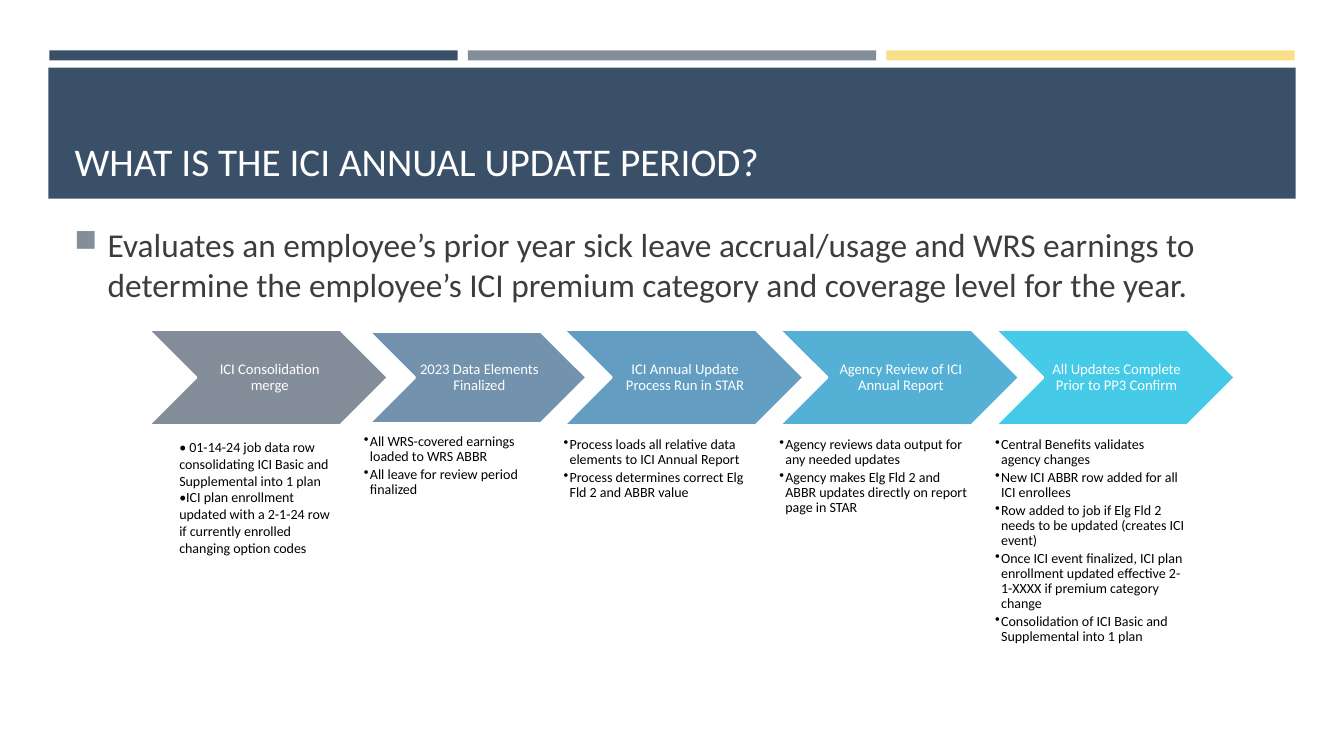
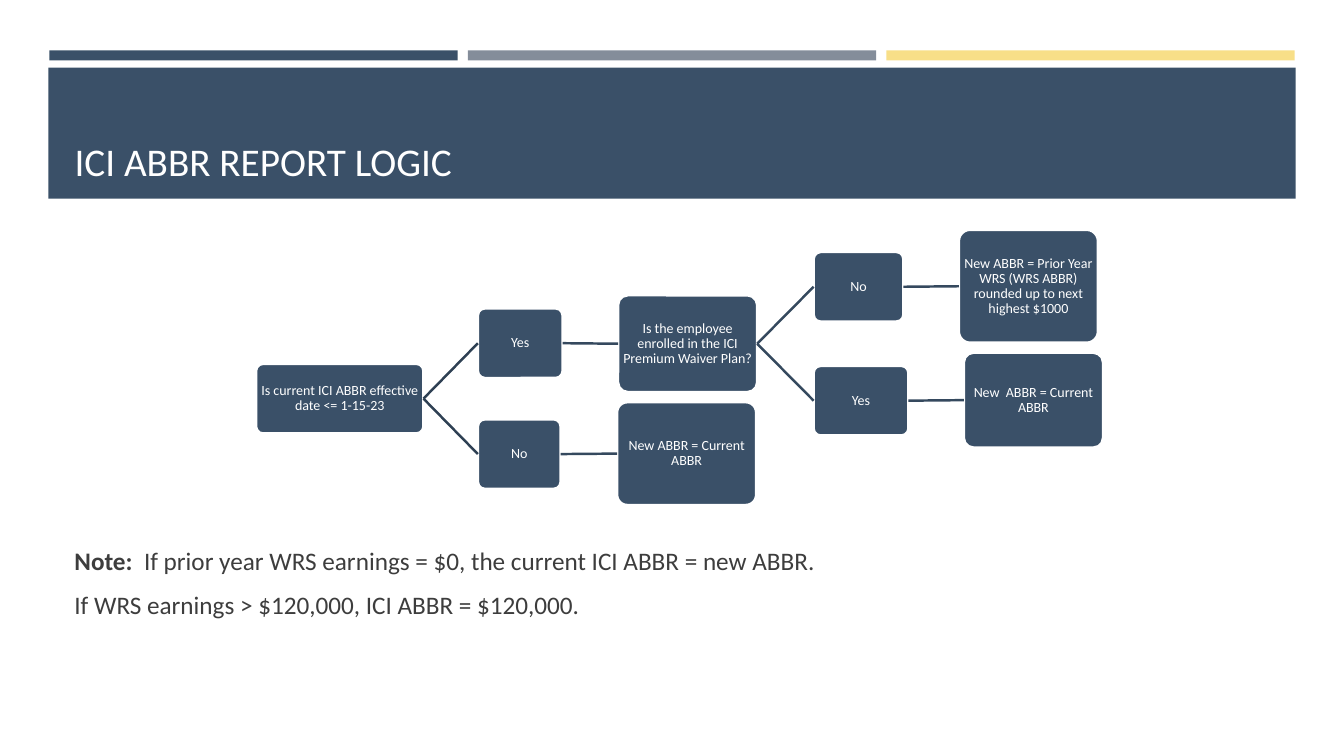
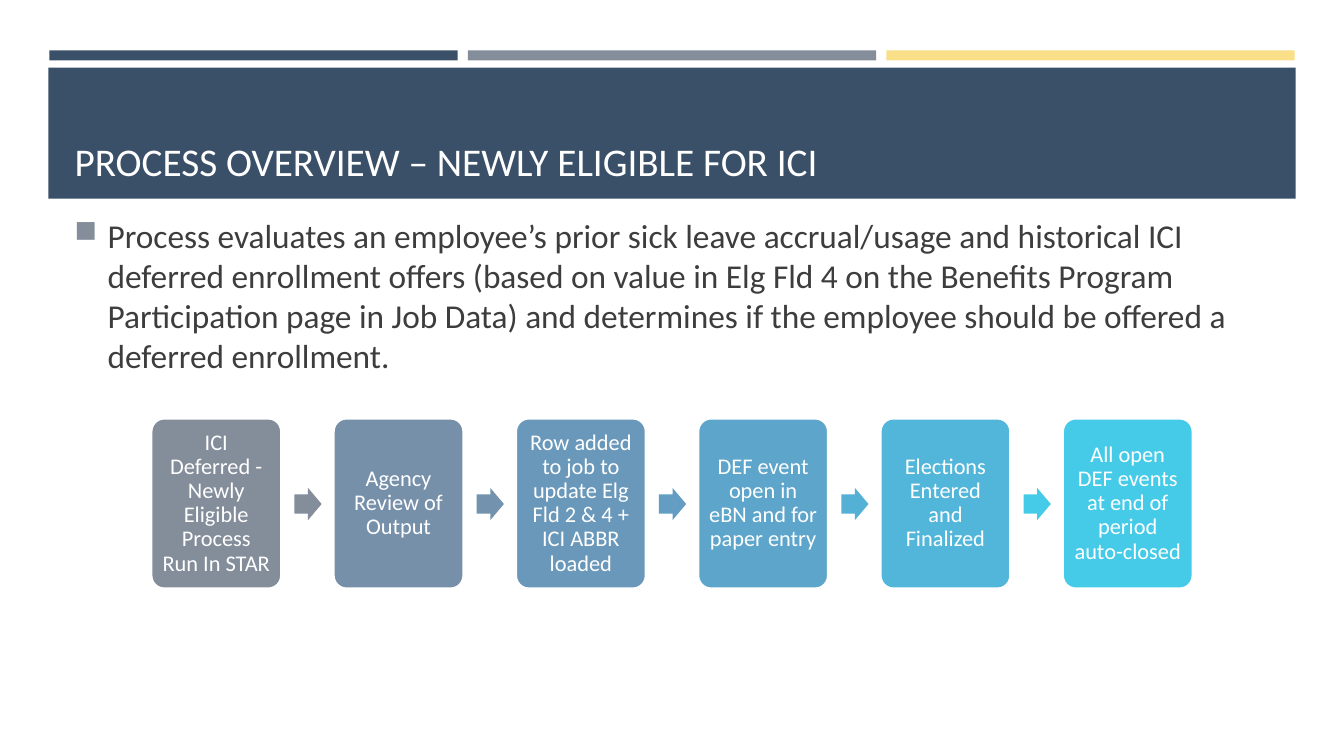
"""Build three slides on the ICI annual update process."""
from lxml.etree import SubElement
from pptx import Presentation
from pptx.dml.color import RGBColor
from pptx.enum.shapes import MSO_CONNECTOR, MSO_SHAPE as Preset
from pptx.enum.text import MSO_ANCHOR as Anchor, MSO_AUTO_SIZE, PP_ALIGN as Align
from pptx.oxml.ns import qn
from pptx.util import Inches, Pt

COLORS = {
    "navy": "3A5068", "grey": "848D9A", "yellow": "F8DF88",
    "white": "FFFFFF", "black": "000000", "body": "3D3D3D",
    "branch": "2E4053", "link": "35495E",
    "stage1": "848D9A", "stage2": "7392AE", "stage3": "639EC2",
    "stage4": "54B1D5", "stage5": "45CBE8",
    "step1": "848D9A", "step2": "7790AA", "step3": "6A98BA",
    "step4": "5DA5CA", "step5": "51B6D9", "step6": "45CBE8",
}
FONT = "Calibri"
LEFT, WIDTH = 0.64, 12.06


def color(name):
    return RGBColor.from_string(COLORS[name])


class Deck:
    def __init__(self):
        self.presentation = Presentation()
        self.presentation.slide_width = Inches(13.33)
        self.presentation.slide_height = Inches(7.5)
        self.slide = None

    def add_slide(self, title):
        layout = self.presentation.slide_layouts[5]
        self.slide = self.presentation.slides.add_slide(layout)
        for index, name in enumerate(("navy", "grey", "yellow")):
            self.shape(Preset.RECTANGLE, (0.49 + 4.15 * index, 0.5, 4.05, 0.1), name)
        self.shape(Preset.RECTANGLE, (0.48, 0.67, 12.37, 1.3), "navy")
        placeholder = self.slide.shapes.title
        placeholder.element.getparent().append(placeholder.element)
        placeholder.left, placeholder.top = Inches(LEFT), Inches(0.77)
        placeholder.width, placeholder.height = Inches(WIDTH), Inches(1.11)
        placeholder.text_frame.auto_size = MSO_AUTO_SIZE.NONE
        self.fill_text(placeholder, [title], 28, "white", anchor=Anchor.BOTTOM)

    def fill_text(self, shape, texts, size, ink, anchor=Anchor.TOP, align=Align.LEFT,
                  insets=(0.1, 0.05, 0.1, 0.05), spacing=None, gap=0, bullet=None, lead=None):
        frame = shape.text_frame
        frame.word_wrap = True
        frame.vertical_anchor = anchor
        frame.margin_left, frame.margin_top, frame.margin_right, frame.margin_bottom = map(Inches, insets)
        for index, text in enumerate(texts):
            paragraph = frame.add_paragraph() if index else frame.paragraphs[0]
            if lead and not index:
                run = paragraph.add_run()
                run.text = lead
                run.font.bold = True
            paragraph.add_run().text = text
            paragraph.alignment = align
            if spacing:
                paragraph.line_spacing = spacing
            if index:
                paragraph.space_before = Pt(gap)
            if bullet:
                self.bullet(paragraph, *bullet)
            font = paragraph.font
            font.name, font.size = FONT, Pt(size)
            font.color.rgb = color(ink)

    def bullet(self, paragraph, character, indent, ink, percent):
        properties = paragraph._p.get_or_add_pPr()
        properties.set("marL", str(Inches(indent)))
        properties.set("indent", str(-Inches(indent)))
        fill = SubElement(properties, qn("a:buClr"))
        SubElement(fill, qn("a:srgbClr"), val=COLORS[ink])
        SubElement(properties, qn("a:buSzPct"), val=str(percent * 1000))
        SubElement(properties, qn("a:buChar"), char=character)

    def shape(self, preset, box, fill, outlined=False, adjustments=()):
        shape = self.slide.shapes.add_shape(preset, *map(Inches, box))
        shape.shadow.inherit = False
        shape.fill.solid()
        shape.fill.fore_color.rgb = color(fill)
        if outlined:
            shape.line.color.rgb = color("white")
            shape.line.width = Pt(1.75)
        else:
            shape.line.fill.background()
        for index, value in enumerate(adjustments):
            shape.adjustments[index] = value
        return shape

    def label(self, preset, box, fill, text, size, insets, adjustments=()):
        shape = self.shape(preset, box, fill, True, adjustments)
        self.fill_text(shape, [text], size, "white", Anchor.MIDDLE, Align.CENTER, insets, 0.9)
        return shape

    def card(self, box, fill, text, size, inset):
        return self.label(Preset.ROUNDED_RECTANGLE, box, fill, text, size, (inset,) * 4, (0.1,))

    def text(self, box, texts, size, ink, **style):
        shape = self.slide.shapes.add_textbox(*map(Inches, box))
        self.fill_text(shape, texts, size, ink, **style)

    def statement(self, top, height, text):
        self.text((LEFT, top, WIDTH, height), [text], 23.8, "body",
                  anchor=Anchor.MIDDLE, bullet=("■", 0.33, "grey", 92))

    def link(self, parent, child, ink):
        connector = self.slide.shapes.add_connector(MSO_CONNECTOR.STRAIGHT, 0, 0, 0, 0)
        connector.begin_connect(parent, 3)
        connector.end_connect(child, 1)
        connector.line.color.rgb = color(ink)
        connector.line.width = Pt(1.75)
        SubElement(connector._element.spPr, qn("a:effectLst"))


def add_update_period(deck):
    deck.add_slide("WHAT IS THE ICI ANNUAL UPDATE PERIOD?")
    deck.statement(2.15, 0.94, "Evaluates an employee’s prior year sick leave accrual/usage and WRS earnings "
                   "to determine the employee’s ICI premium category and coverage level for the year.")
    regular, small = (3.27, 2.38, 0.95), (3.29, 2.16, 0.91)
    stages = [
        (1.47, regular, "ICI Consolidation merge"),
        (3.66, small, "2023 Data Elements Finalized"),
        (5.59, regular, "ICI Annual Update Process Run in STAR"),
        (7.73, regular, "Agency Review of ICI Annual Report"),
        (9.87, regular, "All Updates Complete Prior to PP3 Confirm"),
    ]
    for number, (left, (top, width, height), text) in enumerate(stages, 1):
        deck.label(Preset.CHEVRON, (left, top, width, height), f"stage{number}", text, 10.5,
                   (0.05, 0.02, 0.02, 0.02))
    deck.text((1.68, 4.3, 1.76, 1.28), [
        "• 01-14-24 job data row consolidating ICI Basic and Supplemental into 1 plan",
        "•ICI plan enrollment updated with a 2-1-24 row if currently enrolled changing option codes",
    ], 10, "black")
    details = [
        (3.61, 4.31, 1.81, ["All WRS-covered earnings loaded to WRS ABBR",
                            "All leave for review period finalized"]),
        (5.59, 4.34, 1.9, ["Process loads all relative data elements to ICI Annual Report",
                           "Process determines correct Elg Fld 2 and ABBR value"]),
        (7.73, 4.34, 1.9, ["Agency reviews data output for any needed updates",
                           "Agency makes Elg Fld 2 and ABBR updates directly on report page in STAR"]),
        (9.87, 4.34, 1.9, ["Central Benefits validates agency changes",
                           "New ICI ABBR row added for all ICI enrollees",
                           "Row added to job if Elg Fld 2 needs to be updated (creates ICI event)",
                           "Once ICI event finalized, ICI plan enrollment updated effective 2-1-XXXX "
                           "if premium category change",
                           "Consolidation of ICI Basic and Supplemental into 1 plan"]),
    ]
    for left, top, width, texts in details:
        deck.text((left, top, width, 2.12), texts, 10, "black", insets=(0, 0, 0, 0),
                  spacing=0.9, gap=1.8, bullet=("•", 0.06, "black", 100))


def add_report_logic(deck):
    deck.add_slide("ICI ABBR REPORT LOGIC")
    deck.text((LEFT, 5.28, WIDTH, 1), [
        " If prior year WRS earnings = $0, the current ICI ABBR = new ABBR.",
        "If WRS earnings > $120,000, ICI ABBR = $120,000.",
    ], 18, "body", anchor=Anchor.MIDDLE, gap=9.5, lead="Note: ")
    nodes = {
        "start": (2.54, 3.61, 1.66, 0.69, "Is current ICI ABBR effective date <= 1-15-23"),
        "recent": (4.74, 3.06, 0.84, 0.69, "Yes"),
        "waiver": (6.13, 2.93, 1.38, 0.96, "Is the employee enrolled in the ICI Premium Waiver Plan?"),
        "not waived": (8.07, 2.5, 0.89, 0.69, "No"),
        "prior year": (9.51, 2.28, 1.38, 1.12,
                       "New ABBR = Prior Year WRS (WRS ABBR) rounded up to next highest $1000"),
        "waived": (8.07, 3.63, 0.94, 0.69, "Yes"),
        "waived result": (9.56, 3.5, 1.38, 0.94, "New  ABBR = Current ABBR"),
        "not recent": (4.74, 4.16, 0.82, 0.69, "No"),
        "current": (6.12, 3.99, 1.38, 1.02, "New ABBR = Current ABBR"),
    }
    cards = {name: deck.card(box, "navy", text, 10, 0.01) for name, (*box, text) in nodes.items()}
    links = [
        ("start", "recent"), ("start", "not recent"), ("recent", "waiver"),
        ("waiver", "not waived"), ("waiver", "waived"), ("not waived", "prior year"),
        ("waived", "waived result"), ("not recent", "current"),
    ]
    for parent, child in links:
        deck.link(cards[parent], cards[child], "branch" if parent == "start" else "link")


def add_newly_eligible(deck):
    deck.add_slide("PROCESS OVERVIEW – NEWLY ELIGIBLE FOR ICI")
    deck.statement(2.08, 1.7, "Process evaluates an employee’s prior sick leave accrual/usage and historical ICI "
                   "deferred enrollment offers (based on value in Elg Fld 4 on the Benefits Program "
                   "Participation page in Job Data) and determines if the employee should be offered "
                   "a deferred enrollment.")
    steps = [
        "ICI Deferred - Newly Eligible Process Run In STAR",
        "Agency Review of Output",
        "Row added to job to update Elg Fld 2 & 4 + ICI ABBR loaded",
        "DEF event open in eBN and for paper entry",
        "Elections Entered and Finalized",
        "All open DEF events at end of period auto-closed",
    ]
    pitch = 9.04 / (len(steps) - 1)
    for number, text in enumerate(steps, 1):
        left = 1.5 + pitch * (number - 1)
        deck.card((left, 4.15, 1.29, 1.69), f"step{number}", text, 16, 0.07)
        if number < len(steps):
            deck.shape(Preset.RIGHT_ARROW, (left + 1.42, 4.84, 0.27, 0.32), f"stage{number}",
                       adjustments=(0.6, 0.5))


def main():
    deck = Deck()
    add_update_period(deck)
    add_report_logic(deck)
    add_newly_eligible(deck)
    deck.presentation.save("out.pptx")


if __name__ == "__main__":
    main()
